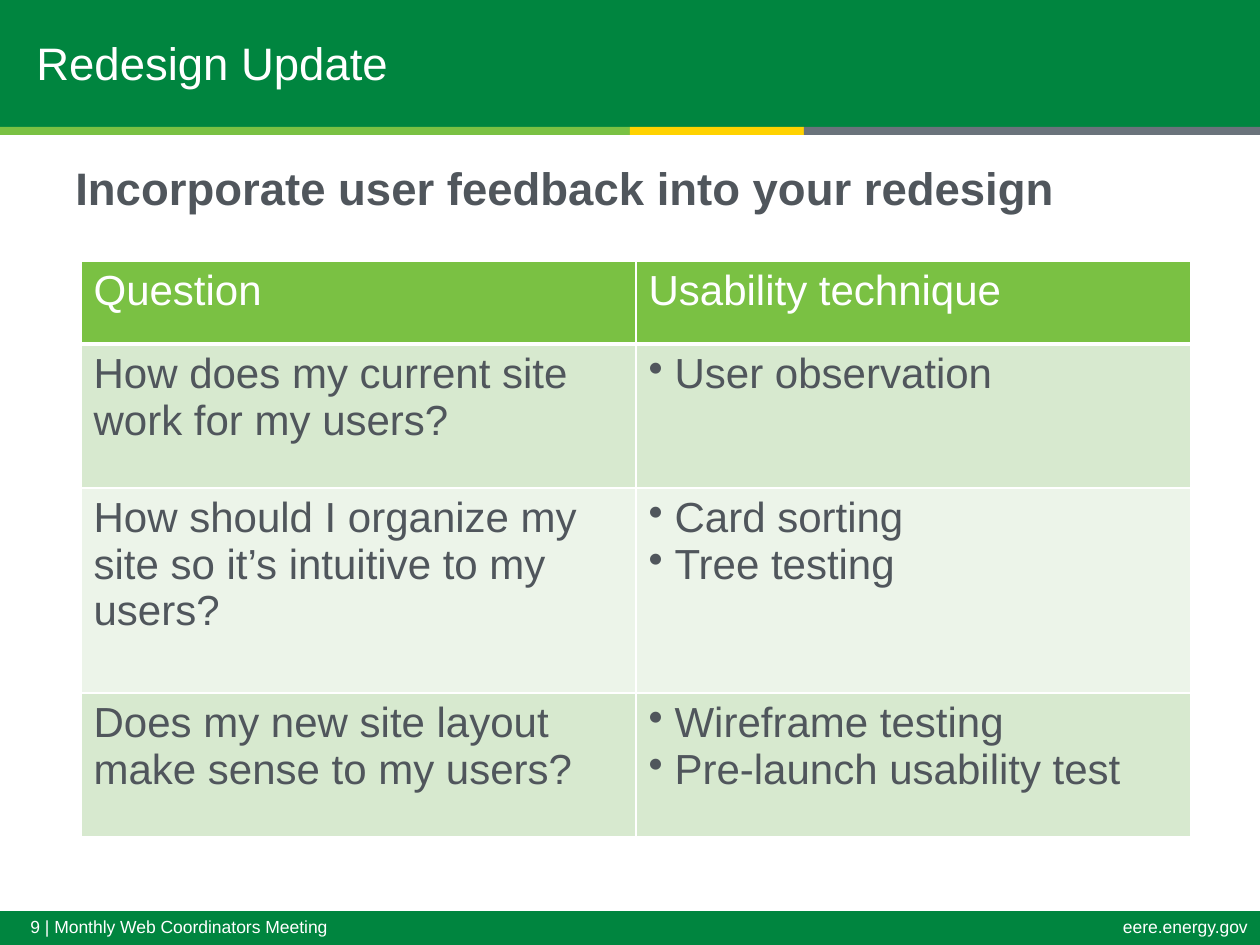
"""Build the Redesign Update slide with its table of usability techniques."""
import dataclasses
import typing

import lxml.etree
import pptx
import pptx.dml.color
import pptx.enum.shapes
import pptx.enum.text
import pptx.oxml.ns
import pptx.util

EMU_PER_PX = 914400 / 126
FONT = "Arial"
WHITE, GREEN, LIME, YELLOW, GRAY = "FFFFFF", "00853F", "7AC143", "FFD200", "6A737B"
SLATE, BAND_DARK, BAND_LIGHT = "50565C", "D7E9CF", "ECF4E9"
BULLET_INDENT = 26
ALIGN = pptx.enum.text.PP_ALIGN
ANCHOR = pptx.enum.text.MSO_ANCHOR


@dataclasses.dataclass
class Area:
    """A rectangle in px."""
    left: int
    top: int
    width: int
    height: int


@dataclasses.dataclass
class Bar:
    """A filled band of the slide frame."""
    area: Area
    color: str


@dataclasses.dataclass
class Row:
    """A question, the techniques that answer it, and the row look."""
    question: str
    techniques: list[str]
    height: int
    fill: str
    color: str = SLATE
    bulleted: bool = True
    bottom_width: int = 1


BARS = [
    Bar(Area(0, 0, 1260, 127), GREEN),
    Bar(Area(0, 911, 1260, 34), GREEN),
    Bar(Area(0, 127, 630, 8), LIME),
    Bar(Area(630, 127, 174, 8), YELLOW),
    Bar(Area(804, 127, 456, 8), GRAY),
]
TABLE_AREA = Area(81, 261, 1110, 576)
ROWS = [
    Row("Question", ["Usability technique"], 83, LIME, WHITE, False, 3),
    Row("How does my current site work for my users?",
        ["User observation"], 144, BAND_DARK),
    Row("How should I organize my site so it’s intuitive to my users?",
        ["Card sorting", "Tree testing"], 205, BAND_LIGHT),
    Row("Does my new site layout make sense to my users?",
        ["Wireframe testing", "Pre-launch usability test"], 144, BAND_DARK),
]


def emu(px: int) -> int:
    """Turn px into EMU."""
    return round(px * EMU_PER_PX)


def place(area: Area) -> list[int]:
    """Give the position and size of an area in EMU."""
    return [emu(length) for length in dataclasses.astuple(area)]


def rgb(color: str) -> pptx.dml.color.RGBColor:
    """Turn a hex string into a colour."""
    return pptx.dml.color.RGBColor.from_string(color)


def write(frame: typing.Any, lines: list[str], *, size: int, color: str,
          bold: bool = False, align: typing.Any = ALIGN.LEFT,
          spacing: float = 1.0, bulleted: bool = False) -> None:
    """Write one paragraph per line into a text frame."""
    frame.word_wrap = True
    for index, line in enumerate(lines):
        para = frame.paragraphs[0] if index == 0 else frame.add_paragraph()
        para.alignment = align
        para.line_spacing = spacing
        if bulleted:
            add_bullet(para)
        span = para.add_run()
        span.text = line
        span.font.name = FONT
        span.font.size = pptx.util.Pt(size)
        span.font.bold = bold
        span.font.color.rgb = rgb(color)


def add_bullet(para: typing.Any) -> None:
    """Give a paragraph a hanging round bullet."""
    properties = para._p.get_or_add_pPr()
    properties.set("marL", str(emu(BULLET_INDENT)))
    properties.set("indent", str(-emu(BULLET_INDENT)))
    bullet = lxml.etree.SubElement(properties, pptx.oxml.ns.qn("a:buChar"))
    bullet.set("char", "•")


def add_text(page: typing.Any, area: Area, text: str,
             anchor: typing.Any = ANCHOR.TOP, **text_format: typing.Any) -> None:
    """Add a text box with one line of text."""
    box = page.shapes.add_textbox(*place(area))
    box.text_frame.vertical_anchor = anchor
    write(box.text_frame, [text], **text_format)


def add_bar(page: typing.Any, bar: Bar) -> None:
    """Add a plain filled rectangle."""
    shape = page.shapes.add_shape(
        pptx.enum.shapes.MSO_SHAPE.RECTANGLE, *place(bar.area))
    shape.shadow.inherit = False
    shape.fill.solid()
    shape.fill.fore_color.rgb = rgb(bar.color)
    shape.line.fill.background()


def set_borders(cell: typing.Any, widths: dict[str, int]) -> None:
    """Draw white cell borders with the given widths in points."""
    qn = pptx.oxml.ns.qn
    properties = cell._tc.get_or_add_tcPr()
    for index, (side, width) in enumerate(widths.items()):
        line = lxml.etree.Element(qn(f"a:ln{side}"), w=str(pptx.util.Pt(width)))
        fill = lxml.etree.SubElement(line, qn("a:solidFill"))
        lxml.etree.SubElement(fill, qn("a:srgbClr"), val=WHITE)
        properties.insert(index, line)


def add_table(page: typing.Any, area: Area, rows: list[Row]) -> None:
    """Add the table of questions and techniques."""
    table = page.shapes.add_table(len(rows), 2, *place(area)).table
    for column in table.columns:
        column.width = emu(area.width // 2)
    top_width = 1
    for index, row in enumerate(rows):
        table.rows[index].height = emu(row.height)
        contents = [([row.question], False), (row.techniques, row.bulleted)]
        for cell, (lines, bulleted) in zip(table.rows[index].cells, contents):
            cell.fill.solid()
            cell.fill.fore_color.rgb = rgb(row.fill)
            set_borders(cell, {"L": 1, "R": 1, "T": top_width, "B": row.bottom_width})
            write(cell.text_frame, lines, size=24, color=row.color, bulleted=bulleted)
        top_width = row.bottom_width


def main() -> None:
    """Build and save the deck."""
    deck = pptx.Presentation()
    deck.slide_width, deck.slide_height = emu(1260), emu(945)
    page = deck.slides.add_slide(deck.slide_layouts[6])
    for bar in BARS:
        add_bar(page, bar)
    footer = {"size": 10, "color": WHITE, "spacing": 0.9}
    add_text(page, Area(18, 912, 1004, 33), "9 | Monthly Web Coordinators Meeting", **footer)
    add_text(page, Area(755, 912, 505, 33), "eere.energy.gov", align=ALIGN.RIGHT, **footer)
    add_text(page, Area(63, 154, 1135, 81), "Incorporate user feedback into your redesign",
             size=26, color=SLATE, bold=True)
    add_table(page, TABLE_AREA, ROWS)
    add_text(page, Area(24, 0, 780, 125), "Redesign Update", ANCHOR.MIDDLE,
             size=26, color=WHITE)
    deck.save("out.pptx")


if __name__ == "__main__":
    main()
